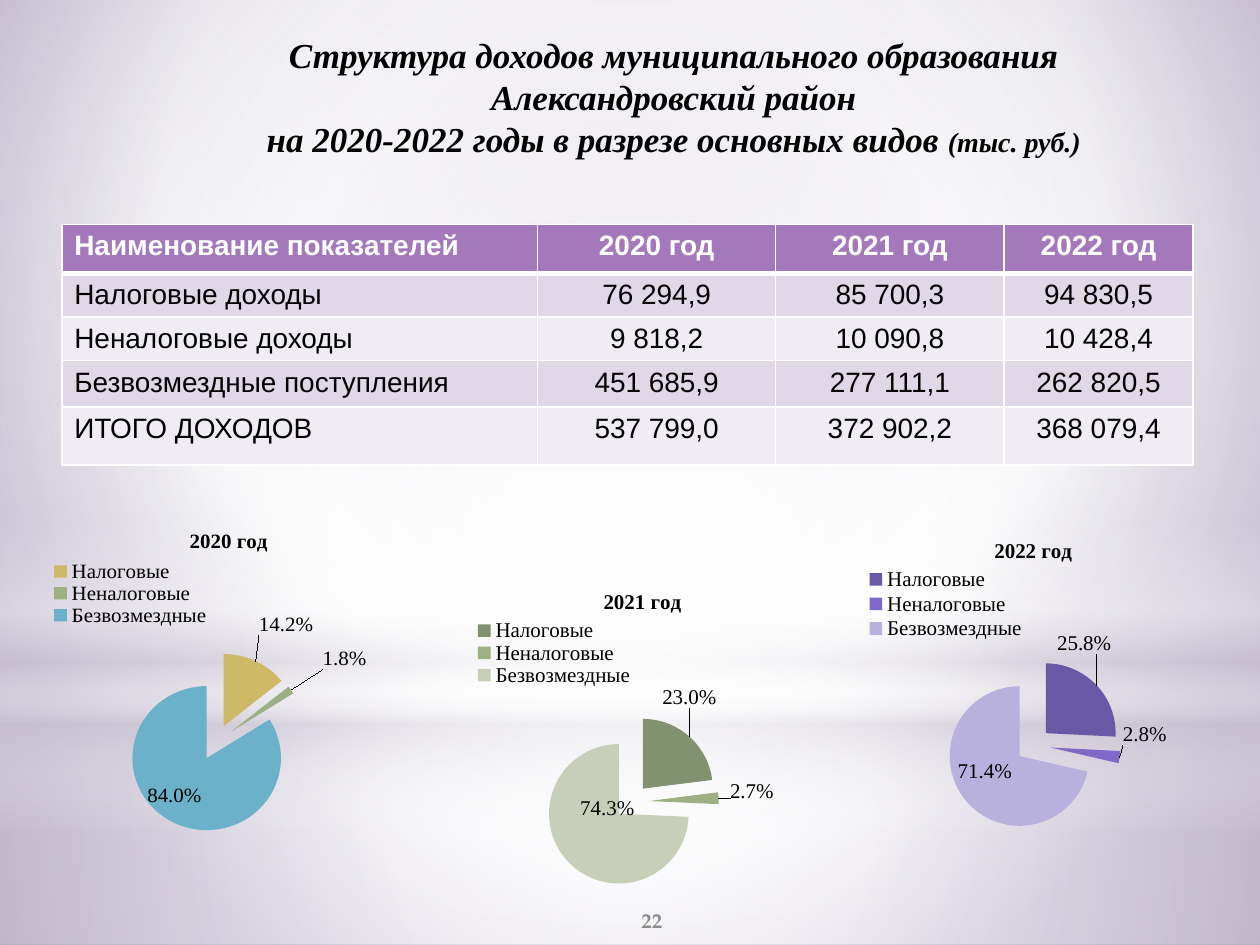
from copy import deepcopy
from lxml import etree
from pptx import Presentation
from pptx.chart.data import CategoryChartData
from pptx.dml.color import RGBColor
from pptx.enum.chart import XL_CHART_TYPE, XL_LEGEND_POSITION
from pptx.enum.shapes import MSO_SHAPE
from pptx.enum.text import MSO_ANCHOR, PP_ALIGN
from pptx.oxml import parse_xml
from pptx.oxml.ns import nsdecls, qn
from pptx.util import Pt

PIE = XL_CHART_TYPE.PIE
TOP = XL_LEGEND_POSITION.TOP
RECT, OVAL = MSO_SHAPE.RECTANGLE, MSO_SHAPE.OVAL
MIDDLE = MSO_ANCHOR.MIDDLE
LEFT, CENTER = PP_ALIGN.LEFT, PP_ALIGN.CENTER

BLACK = RGBColor(0x00, 0x00, 0x00)
WHITE = RGBColor(0xFF, 0xFF, 0xFF)
GRAY = RGBColor(0x8C, 0x8C, 0x8C)
MIST = RGBColor(0xC9, 0xC2, 0xD1)
LILAC = RGBColor(0xC1, 0xB7, 0xCD)
MAUVE = RGBColor(0xA1, 0x91, 0xB5)
HEAD = RGBColor(0xA3, 0x79, 0xBB)
BANDS = RGBColor(0xF0, 0xEC, 0xF3), RGBColor(0xE0, 0xD7, 0xE7)
GOLD = RGBColor(0xCE, 0xB9, 0x66)
GREEN = RGBColor(0x9C, 0xB0, 0x84)
BLUE = RGBColor(0x6B, 0xB1, 0xC9)
MOSS = RGBColor(0x82, 0x91, 0x6F)
SAGE = RGBColor(0xC7, 0xCF, 0xB9)
PLUM = RGBColor(0x68, 0x58, 0xA6)
VIOLET = RGBColor(0x7F, 0x68, 0xC8)
PALE = RGBColor(0xB9, 0xB1, 0xDD)

SERIF, SANS, BOOK = "Times New Roman", "Arial", "TeX Gyre Pagella"
NAMES = "Налоговые", "Неналоговые", "Безвозмездные"
YEARS = "2020 год", "2021 год", "2022 год"
ROWS = [
    ("Наименование показателей", *YEARS),
    ("Налоговые доходы", "76 294,9", "85 700,3", "94 830,5"),
    ("Неналоговые доходы", "9 818,2", "10 090,8", "10 428,4"),
    ("Безвозмездные поступления", "451 685,9", "277 111,1", "262 820,5"),
    ("ИТОГО ДОХОДОВ", "537 799,0", "372 902,2", "368 079,4"),
]
PIES = [
    dict(box=(8.6, 292.3, 244, 193), values=(14.2, 1.8, 84),
         tints=(GOLD, GREEN, BLUE), plot=(0.02, 0.43, 0.9, 0.55),
         key=(0.08, 0.15, 0.38, 0.2),
         shifts=((0, -0.06), (0.06, -0.05), (0.08, -0.13))),
    dict(box=(252, 326.9, 226.8, 181.4), values=(23, 2.7, 74.3),
         tints=(MOSS, GREEN, SAGE), plot=(0.03, 0.45, 0.9, 0.55),
         key=(0.08, 0.15, 0.41, 0.21),
         shifts=((-0.08, -0.07), (0.01, -0.02), (0.18, -0.22))),
    dict(box=(473, 298, 232.6, 181.4), values=(25.8, 2.8, 71.4),
         tints=(PLUM, VIOLET, PALE), plot=(0.08, 0.43, 0.85, 0.55),
         key=(0.09, 0.14, 0.4, 0.24),
         shifts=((-0.11, -0.08), (-0.01, -0.11), (0.13, -0.14))),
]


def pts(box):
    return [Pt(v) for v in box]


def style(font, size, face, color=BLACK, bold=False, slant=False):
    font.size, font.name = Pt(size), face
    font.bold, font.italic = bold, slant
    font.color.rgb = color


def write(para, text, align=LEFT, **form):
    para.alignment = align
    for i, line in enumerate(text.split("\n")):
        if i:
            para.add_line_break()
        run = para.add_run()
        run.text = line
        style(run.font, **form)


def blend(node, stops, focus=None):
    marks = "".join(
        f'<a:gs pos="{pos * 1000}"><a:srgbClr val="{color}">'
        f'<a:alpha val="{alpha * 1000}"/></a:srgbClr></a:gs>'
        for pos, color, alpha in stops)
    way = '<a:lin ang="5400000" scaled="0"/>'
    if focus:
        sides = " ".join(f'{s}="{v * 1000}"' for s, v in zip("ltrb", focus))
        way = f'<a:path path="circle"><a:fillToRect {sides}/></a:path>'
    grad = parse_xml(f'<a:gradFill {nsdecls("a")} rotWithShape="1">'
                     f'<a:gsLst>{marks}</a:gsLst>{way}</a:gradFill>')
    old = node.find(qn("a:solidFill"))
    node.replace(old, grad)


def glow(slide, kind, box, stops, focus=None):
    shape = slide.shapes.add_shape(kind, *pts(box))
    shape.shadow.inherit = False
    shape.line.fill.background()
    shape.fill.solid()
    blend(shape.element.spPr, stops, focus)


def scene(slide, box):
    left, top, wide, high = box
    slide.background.fill.solid()
    blend(slide.element.find(".//" + qn("p:bgPr")),
          [(0, LILAC, 100), (60, WHITE, 100), (100, MAUVE, 100)],
          (20, 10, 20, 60))
    mid = (50, 50, 50, 50)
    cut = 402
    glow(slide, RECT, (left, top + cut, wide, high - cut),
         [(0, WHITE, 91), (37, WHITE, 76), (100, MIST, 79)], mid)
    glow(slide, RECT, (left, top, wide, cut),
         [(0, WHITE, 89), (48, WHITE, 62), (100, MIST, 79)], mid)
    glow(slide, RECT, (left, top + 297, wide, 180),
         [(0, WHITE, 0), (29, WHITE, 30), (45, MIST, 40),
          (55, WHITE, 26), (65, MIST, 60), (100, WHITE, 0)])
    glow(slide, OVAL, (left, top + 126, wide, cut),
         [(0, WHITE, 100), (56, WHITE, 0)], mid)


def frame(slide, box):
    text = slide.shapes.add_textbox(*pts(box)).text_frame
    text.word_wrap = True
    text.vertical_anchor = MIDDLE
    return text


def title(slide, box):
    para = frame(slide, box).paragraphs[0]
    para.line_spacing = Pt(24)
    form = dict(align=CENTER, face=SERIF, bold=True, slant=True)
    write(para, "Структура доходов муниципального образования\n"
          "Александровский район\n"
          "на 2020-2022 годы в разрезе основных видов ", size=20, **form)
    write(para, "(тыс. руб.)", size=16, **form)


def edge(cell, base):
    props = cell._tc.get_or_add_tcPr()
    for i, side in enumerate(("lnL", "lnR", "lnT", "lnB")):
        width = base if side == "lnB" else 1
        props.insert(i, parse_xml(
            f'<a:{side} {nsdecls("a")} w="{Pt(width)}"><a:solidFill>'
            f'<a:srgbClr val="{WHITE}"/></a:solidFill></a:{side}>'))


def grid(slide, box):
    table = slide.shapes.add_table(len(ROWS), len(ROWS[0]), *pts(box)).table
    table.horz_banding = False
    for col, width in zip(table.columns, (272, 136, 130.5, 108)):
        col.width = Pt(width)
    for r, (row, high) in enumerate(zip(ROWS, (28, 25, 25, 26.5, 33))):
        table.rows[r].height = Pt(high)
        for c, text in enumerate(row):
            cell = table.cell(r, c)
            cell.margin_bottom = Pt(2)
            cell.fill.solid()
            cell.fill.fore_color.rgb = BANDS[r % 2] if r else HEAD
            edge(cell, 1 if r else 3)
            write(cell.text_frame.paragraphs[0], text, size=16, face=SANS,
                  align=CENTER if c else LEFT, bold=r == 0,
                  color=BLACK if r else WHITE)


def place(node, spot, index, inner=False):
    for old in node.findall(qn("c:layout")):
        node.remove(old)
    lay = parse_xml(f'<c:layout {nsdecls("c")}><c:manualLayout/></c:layout>')
    items = [("layoutTarget", "inner")] if inner else []
    if node.tag != qn("c:dLbl"):
        items += [("xMode", "edge"), ("yMode", "edge")]
    items += zip("xywh", spot)
    for tag, val in items:
        etree.SubElement(lay[0], qn("c:" + tag)).set("val", str(val))
    node.insert(index, lay)


def pie(slide, name, box, values, tints, plot, key, shifts):
    data = CategoryChartData()
    data.categories = NAMES
    data.add_series("Series 1", values)
    chart = slide.shapes.add_chart(PIE, *pts(box), data).chart
    style(chart.font, 18, BOOK)
    write(chart.chart_title.text_frame.paragraphs[0], name, align=CENTER,
          size=12, face=SERIF, bold=True)
    place(chart.chart_title._element, (0.4, 0.04), 1)
    chart.has_legend = True
    chart.legend.position = TOP
    chart.legend.include_in_layout = False
    style(chart.legend.font, 12, SERIF)
    place(chart.legend._element, key, 1)
    place(chart._chartSpace.chart.plotArea, plot, 0, inner=True)
    chart.plots[0].vary_by_categories = True
    series = chart.plots[0].series[0]
    for i, tint in enumerate(tints):
        fill = series.points[i].format.fill
        fill.solid()
        fill.fore_color.rgb = tint
    burst = parse_xml(f'<c:explosion {nsdecls("c")} val="25"/>')
    series._element.find(qn("c:dPt")).addprevious(burst)
    labels = series.data_labels
    labels.show_value, labels.show_percentage = False, True
    labels.number_format, labels.number_format_is_linked = "0.0%", False
    style(labels.font, 12, SERIF)
    root = labels._element
    for i, shift in enumerate(shifts):
        label = parse_xml(
            f'<c:dLbl {nsdecls("c")}><c:idx val="{i}"/>'
            '<c:numFmt formatCode="0.0%" sourceLinked="0"/>'
            '<c:dLblPos val="outEnd"/><c:showLegendKey val="0"/>'
            '<c:showVal val="0"/><c:showCatName val="0"/>'
            '<c:showSerName val="0"/><c:showPercent val="1"/>'
            '<c:showBubbleSize val="0"/></c:dLbl>')
        label.insert(2, deepcopy(root.find(qn("c:txPr"))))
        place(label, shift, 1)
        root.insert(i, label)


def number(slide, box):
    write(frame(slide, box).paragraphs[0], "22", align=CENTER, size=12,
          face=BOOK, color=GRAY, bold=True)


def main():
    deck = Presentation()
    deck.slide_width, deck.slide_height = Pt(720), Pt(540)
    slide = deck.slides.add_slide(deck.slide_layouts[6])
    scene(slide, (0, 0, 720, 540))
    number(slide, (354, 511, 37, 29))
    title(slide, (70.5, 12, 629, 86.5))
    grid(slide, (35.3, 128.2, 646.5, 137.5))
    for year, parts in zip(YEARS, PIES):
        pie(slide, year, **parts)
    deck.save("out.pptx")


if __name__ == "__main__":
    main()
